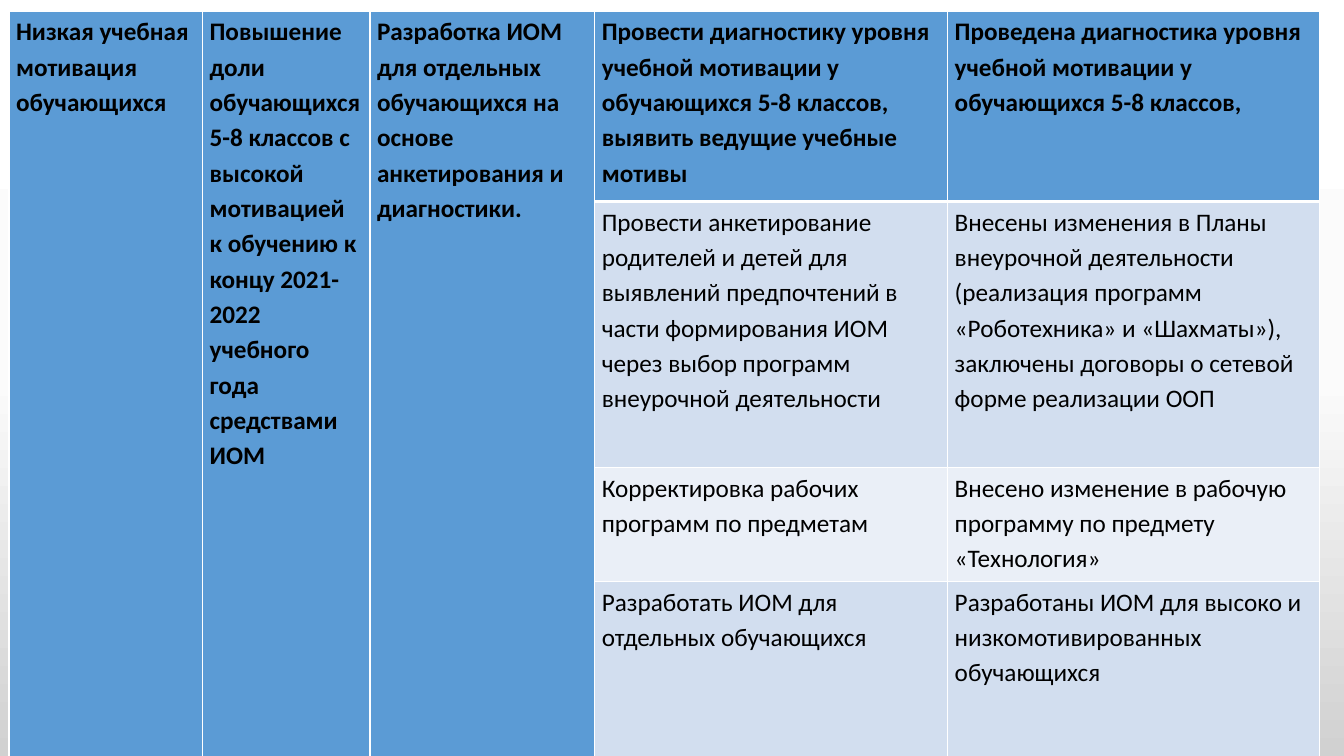
from lxml import etree
from copy import deepcopy
from dataclasses import dataclass
from pptx import Presentation, util as u
from pptx.dml.color import RGBColor
from pptx.enum import text
from pptx.oxml import ns


@dataclass(frozen=True)
class Theme:
    font: str = "Calibri"
    size: int = 18
    ink: str = "000000"
    header: str = "5B9BD5"
    bands: tuple = ("D2DEEF", "EAEFF7")
    rule: str = "FFFFFF"
    thin: int = 1
    thick: int = 3
    backdrop: tuple = ((0, "FFFFFF"), (0.5, "FBFBFB"), (1, "D1D1D1"))


theme = Theme()


def add_border(cell, side, weight):
    """Add one solid rule to a table cell."""
    line = etree.SubElement(cell._tc.get_or_add_tcPr(), ns.qn(f"a:ln{side}"), w=str(u.Pt(weight)))
    solid = etree.SubElement(line, ns.qn("a:solidFill"))
    etree.SubElement(solid, ns.qn("a:srgbClr"), val=theme.rule)


# Slide
deck = Presentation()
deck.slide_width, deck.slide_height = u.Inches(13.33), u.Inches(7.5)
slide = deck.slides.add_slide(deck.slide_layouts[6])

# Background: three stops from top to bottom
backdrop = slide.background.fill
backdrop.gradient()
backdrop.gradient_angle = 270
stop_list = slide._element.find(".//" + ns.qn("a:gsLst"))
stop_list.append(deepcopy(stop_list[-1]))
for stop, (position, color) in zip(backdrop.gradient_stops, theme.backdrop):
    stop.position = position
    stop.color.rgb = RGBColor.from_string(color)

# Plan: problem, goal and measure span all rows; actions and results go row by row
spanning = [
    "Низкая учебная мотивация обучающихся",
    "Повышение доли обучающихся 5-8 классов с высокой мотивацией к обучению к концу 2021-2022 "
    "учебного года средствами ИОМ",
    "Разработка ИОМ для отдельных обучающихся на основе анкетирования и диагностики.",
]
steps = [
    ("Провести диагностику уровня учебной мотивации у обучающихся 5-8 классов, "
     "выявить ведущие учебные мотивы",
     "Проведена диагностика уровня учебной мотивации у обучающихся 5-8 классов,"),
    ("Провести анкетирование родителей и детей для выявлений предпочтений в части "
     "формирования ИОМ через выбор программ внеурочной деятельности",
     "Внесены изменения в Планы внеурочной деятельности (реализация программ «Роботехника» "
     "и «Шахматы»), заключены договоры о сетевой форме реализации ООП"),
    ("Корректировка рабочих программ по предметам",
     "Внесено изменение в рабочую программу по предмету «Технология»"),
    ("Разработать ИОМ для отдельных обучающихся",
     "Разработаны ИОМ для высоко и низкомотивированных обучающихся"),
]
column_widths = [1.92, 1.66, 2.23, 3.5, 3.69]
row_heights = [1.89, 2.64, 1.13, 1.73]

# Table grid
plan = slide.shapes.add_table(
    len(row_heights), len(column_widths), u.Inches(0.09), u.Inches(0.11),
    u.Inches(sum(column_widths)), u.Inches(sum(row_heights))).table
for column, width in zip(plan.columns, column_widths):
    column.width = u.Inches(width)
for row, height in zip(plan.rows, row_heights):
    row.height = u.Inches(height)
for c in range(len(spanning)):
    plan.cell(0, c).merge(plan.cell(len(steps) - 1, c))

# Cells
for r, step in enumerate(steps):
    for c, wording in enumerate([*spanning, *step]):
        cell = plan.cell(r, c)
        is_header = r == 0 or c < len(spanning)
        cell.margin_left = cell.margin_right = u.Inches(0.07)
        cell.margin_top, cell.margin_bottom = u.Inches(0.01), 0
        add_border(cell, "L", theme.thin)
        add_border(cell, "R", theme.thin)
        add_border(cell, "T", theme.thick if r == 1 else theme.thin)
        add_border(cell, "B", theme.thick if r == 0 else theme.thin)
        cell.fill.solid()
        cell.fill.fore_color.rgb = RGBColor.from_string(
            theme.header if is_header else theme.bands[(r - 1) % 2])
        if cell.is_spanned:
            continue
        cell.vertical_anchor = text.MSO_ANCHOR.TOP
        cell.text_frame.text = wording
        paragraph = cell.text_frame.paragraphs[0]
        paragraph.line_spacing = 1.15
        font = paragraph.runs[0].font
        font.name, font.size, font.bold = theme.font, u.Pt(theme.size), is_header
        font.color.rgb = RGBColor.from_string(theme.ink)

deck.save("out.pptx")
